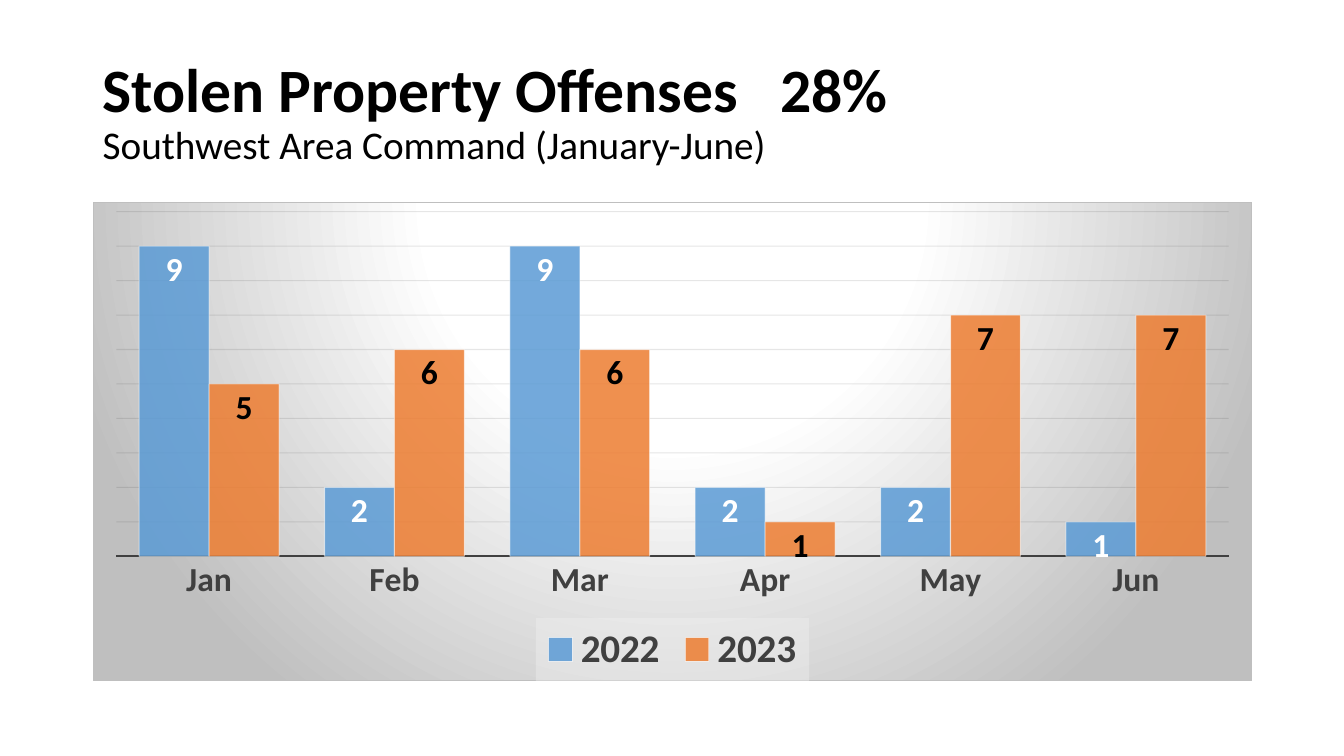
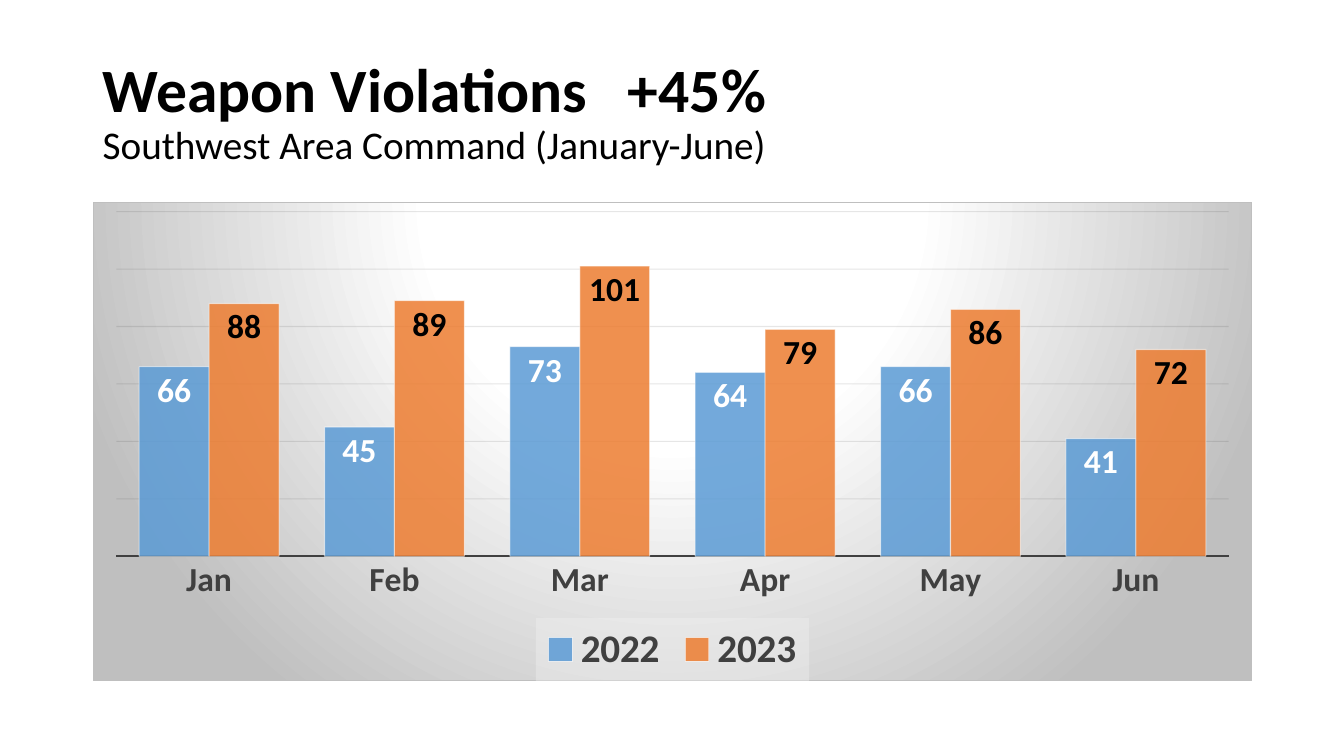
from pptx import Presentation
from pptx.chart.data import CategoryChartData
from pptx.dml.color import RGBColor
from pptx.enum.chart import XL_CHART_TYPE, XL_LABEL_POSITION, XL_LEGEND_POSITION, XL_TICK_MARK
from pptx.enum.text import MSO_ANCHOR
from pptx.oxml import parse_xml
from pptx.oxml.ns import nsdecls
from pptx.util import Inches, Pt

# Content: stop is where the percentage starts, in inches from the text edge
MONTHS = ["Jan", "Feb", "Mar", "Apr", "May", "Jun"]
SUBTITLE = "Southwest Area Command (January-June)"
SLIDES = [
    {"title": "Stolen Property Offenses", "change": "28%", "stop": 6.72,
     "top": 10, "step": 1,
     "2022": [9, 2, 9, 2, 2, 1], "2023": [5, 6, 6, 1, 7, 7]},
    {"title": "Weapon Violations", "change": "+45%", "stop": 5.21,
     "top": 120, "step": 20,
     "2022": [66, 45, 73, 64, 66, 41], "2023": [88, 89, 101, 79, 86, 72]},
]

# Shared style
FONT = "Calibri"
COLORS = {"black": "000000", "white": "FFFFFF", "blue": "5B9BD5",
          "orange": "ED7D31", "dark": "404040", "grid": "0D0D0D",
          "silver": "BFBFBF", "legend": "F2F2F2"}
SERIES = [("2022", "blue", "white"), ("2023", "orange", "black")]
LEFT, WIDTH = Inches(0.92), Inches(11.5)


def rgb(name):
    return RGBColor.from_string(COLORS[name])


def style_font(font, size, color, bold=True):
    font.name, font.size, font.bold = FONT, Pt(size), bold
    font.color.rgb = rgb(color)


def style_line(line, color, width):
    line.color.rgb = rgb(color)
    line.width = Pt(width)


def add_text(para, text, size=44, color="black", bold=True):
    span = para.add_run()
    span.text = text
    style_font(span.font, size, color, bold)


def add_title(page, item):
    box = page.shapes.add_textbox(LEFT, Inches(0.4), WIDTH, Inches(1.45))
    frame = box.text_frame
    frame.word_wrap = True
    frame.vertical_anchor = MSO_ANCHOR.MIDDLE
    para = frame.paragraphs[0]
    para.line_spacing = 0.9
    para._p.get_or_add_pPr().append(parse_xml(
        f'<a:tabLst {nsdecls("a")}><a:tab pos="{Inches(item["stop"])}" algn="l"/></a:tabLst>'))
    add_text(para, f'{item["title"]}\t{item["change"]}')
    para.add_line_break()
    add_text(para, SUBTITLE, size=28, bold=False)


def set_opacity(chart, query, percent):
    for color in chart.element.xpath(query):
        color.append(parse_xml(f'<a:alpha {nsdecls("a")} val="{percent * 1000}"/>'))


def fill_background(chart):
    stops = "".join(
        f'<a:gs pos="{place * 1000}"><a:srgbClr val="{COLORS[name]}"/></a:gs>'
        for place, name in [(0, "white"), (39, "white"), (100, "silver")])
    chart.element.xpath("c:chart")[0].addnext(parse_xml(
        f'<c:spPr {nsdecls("c", "a")}><a:gradFill><a:gsLst>{stops}</a:gsLst>'
        '<a:path path="circle"><a:fillToRect l="50000" t="-80000" r="50000" b="180000"/></a:path>'
        f'</a:gradFill><a:ln w="{Pt(0.75)}"><a:solidFill><a:srgbClr val="{COLORS["silver"]}"/>'
        '</a:solidFill></a:ln></c:spPr>'))


def add_legend(chart):
    chart.has_legend = True
    chart.legend.position = XL_LEGEND_POSITION.BOTTOM
    chart.legend.include_in_layout = False
    style_font(chart.legend.font, 28, "dark")
    chart.element.xpath(".//c:legend/c:txPr")[0].addprevious(parse_xml(
        f'<c:spPr {nsdecls("c", "a")}><a:solidFill>'
        f'<a:srgbClr val="{COLORS["legend"]}"/></a:solidFill></c:spPr>'))
    set_opacity(chart, ".//c:legend/c:spPr//a:srgbClr", 39)


def style_axes(chart, item):
    months, values = chart.category_axis, chart.value_axis
    months.major_tick_mark = months.minor_tick_mark = XL_TICK_MARK.NONE
    style_font(months.tick_labels.font, 24, "dark")
    style_line(months.format.line, "dark", 1.5)
    values.visible = False
    values.minimum_scale, values.maximum_scale = 0, item["top"]
    values.major_unit = item["step"]
    style_line(values.major_gridlines.format.line, "grid", 0.75)
    set_opacity(chart, ".//c:majorGridlines//a:srgbClr", 10)


def style_columns(chart):
    plot = chart.plots[0]
    plot.gap_width, plot.overlap = 65, 0
    plot.vary_by_categories = False
    for series, (_, fill, label) in zip(plot.series, SERIES):
        series.format.fill.solid()
        series.format.fill.fore_color.rgb = rgb(fill)
        style_line(series.format.line, "white", 0.75)
        labels = series.data_labels
        labels.show_value = True
        labels.position = XL_LABEL_POSITION.INSIDE_END
        style_font(labels.font, 24, label)
    set_opacity(chart, ".//c:ser/c:spPr/a:solidFill/a:srgbClr", 85)
    set_opacity(chart, ".//c:ser/c:spPr/a:ln//a:srgbClr", 50)


def add_columns(page, item):
    data = CategoryChartData()
    data.categories = MONTHS
    for year, _, _ in SERIES:
        data.add_series(year, item[year])
    chart = page.shapes.add_chart(XL_CHART_TYPE.COLUMN_CLUSTERED, LEFT, Inches(2),
                                  WIDTH, Inches(4.76), data).chart
    chart.has_title = False
    style_font(chart.font, 10, "black", bold=False)
    fill_background(chart)
    add_legend(chart)
    style_axes(chart, item)
    style_columns(chart)


def main():
    deck = Presentation()
    deck.slide_width, deck.slide_height = Inches(13.33), Inches(7.5)
    for item in SLIDES:
        page = deck.slides.add_slide(deck.slide_layouts[6])
        add_title(page, item)
        add_columns(page, item)
    deck.save("out.pptx")


if __name__ == "__main__":
    main()
